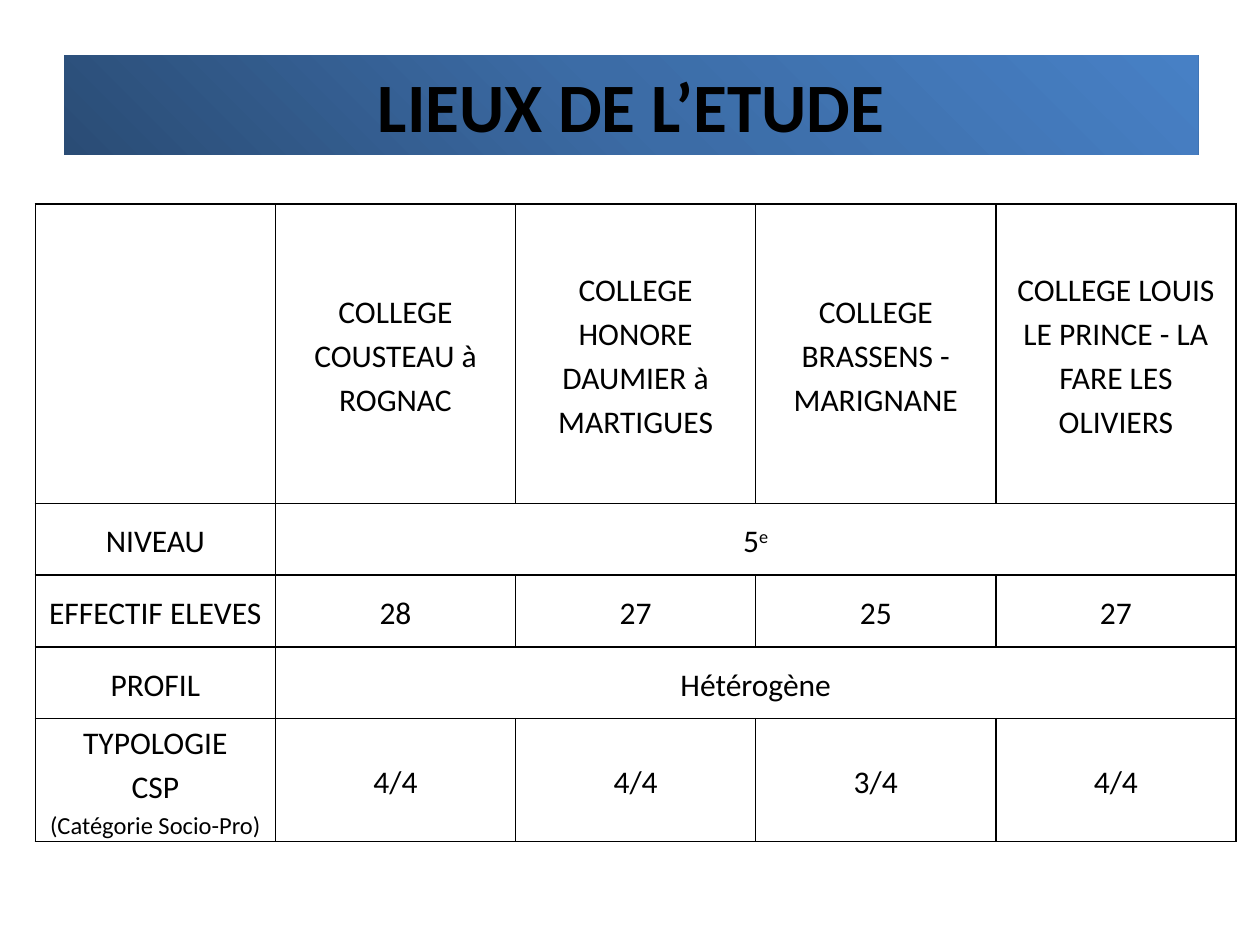
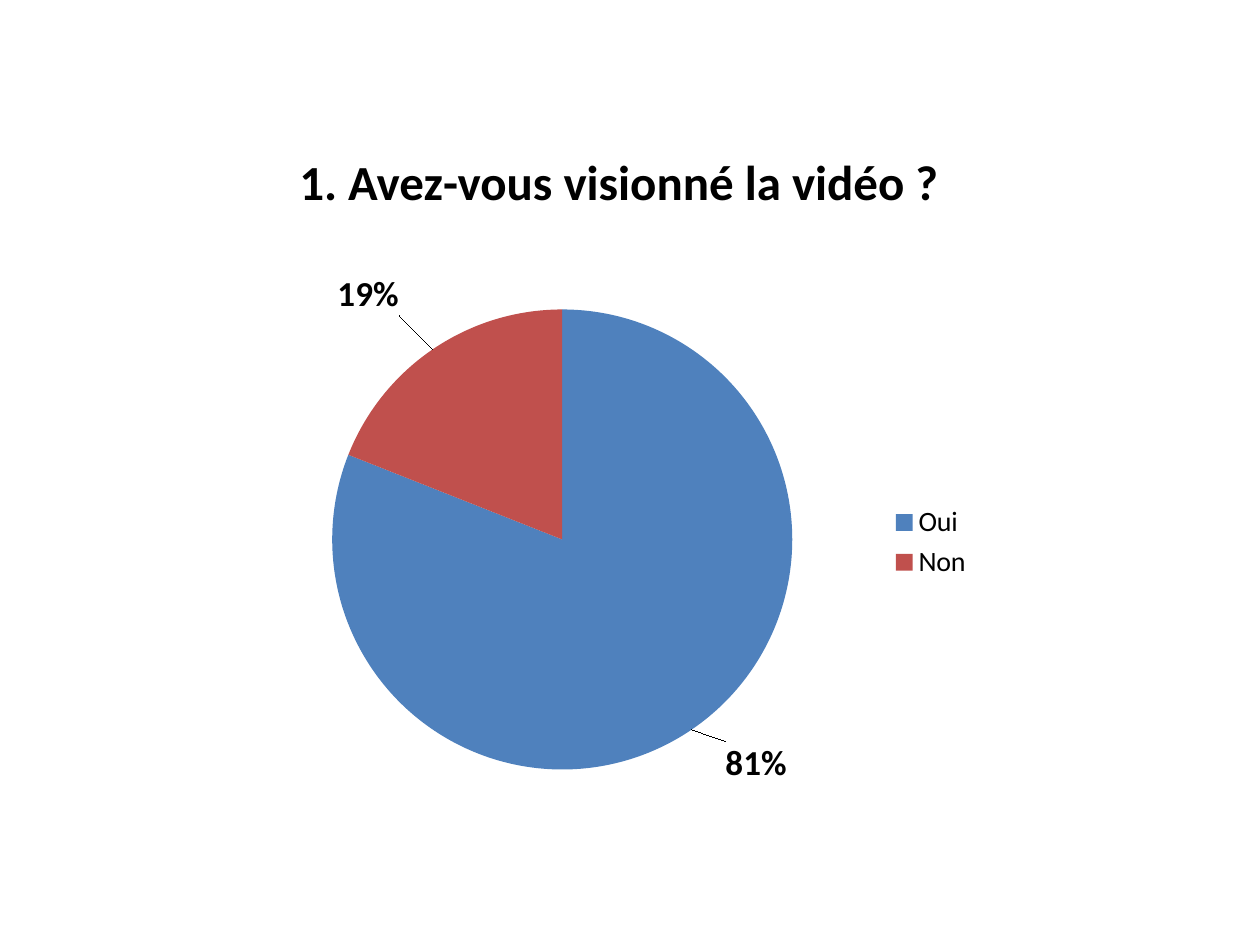
from copy import deepcopy

from pptx import Presentation
from pptx.chart.data import CategoryChartData
from pptx.dml.color import RGBColor
from pptx.enum.chart import XL_CHART_TYPE, XL_LABEL_POSITION, XL_LEGEND_POSITION
from pptx.enum.shapes import MSO_SHAPE
from pptx.enum.text import MSO_ANCHOR, PP_ALIGN
from pptx.oxml import parse_xml
from pptx.oxml.ns import nsdecls
from pptx.util import Inches, Pt

BLACK = RGBColor(0x00, 0x00, 0x00)
NAVY = RGBColor(0x2A, 0x4C, 0x75)
STEEL = RGBColor(0x3C, 0x6C, 0xA6)
SKY = RGBColor(0x47, 0x80, 0xC5)
BLUE = RGBColor(0x4F, 0x81, 0xBD)
RED = RGBColor(0xC0, 0x50, 0x4D)
FONT = "Calibri"
COLS, ROWS = 20, 15  # grid of the slide


class Deck:
    """Style, current slide and one method per kind of element."""

    def __init__(self):
        self.prs = Presentation()
        self.prs.slide_width, self.prs.slide_height = Inches(10), Inches(7.5)
        self.slide = None

    def page(self):
        self.slide = self.prs.slides.add_slide(self.prs.slide_layouts[6])

    def across(self, n):
        return round(self.prs.slide_width * n / COLS)

    def down(self, n):
        return round(self.prs.slide_height * n / ROWS)

    def box(self, x, y, w, h):
        return self.across(x), self.down(y), self.across(w), self.down(h)

    def style(self, font, size, bold=False):
        font.name, font.size, font.bold = FONT, Pt(size), bold
        font.color.rgb = BLACK

    def put(self, frame, lines, bold=False, space=None):
        """Each line is a list of (text, size) or (text, size, raise) runs."""
        for i, line in enumerate(lines):
            para = frame.add_paragraph() if i else frame.paragraphs[0]
            para.alignment = PP_ALIGN.CENTER
            para.line_spacing = space
            for text, size, *lift in line:
                run = para.add_run()
                run.text = text
                self.style(run.font, size, bold)
                if lift:
                    run._r.get_or_add_rPr().set("baseline", f"{lift[0] * 1000}")

    def band(self, text, size, *place):
        shape = self.slide.shapes.add_shape(MSO_SHAPE.RECTANGLE, *self.box(*place))
        shape.shadow.inherit = False
        shape.line.fill.background()
        fill = shape.fill
        fill.gradient()
        fill.gradient_angle = 45
        first = fill._fill._gradFill.gsLst[0]
        first.addnext(deepcopy(first))
        for stop, color, pos in zip(fill.gradient_stops, (NAVY, STEEL, SKY), (0, 0.5, 1)):
            stop.color.rgb, stop.position = color, pos
        shape.text_frame.vertical_anchor = MSO_ANCHOR.MIDDLE
        self.put(shape.text_frame, [[(text, size)]], bold=True)

    def text(self, text, size, *place):
        frame = self.slide.shapes.add_textbox(*self.box(*place)).text_frame
        frame.word_wrap = True
        frame.vertical_anchor = MSO_ANCHOR.BOTTOM
        self.put(frame, [[(text, size)]], bold=True)

    def table(self, data, highs, *place):
        wide = len(data[0])
        table = self.slide.shapes.add_table(len(data), wide, *self.box(*place)).table
        table.first_row = table.horz_banding = False
        for row, high in zip(table.rows, highs):
            row.height = self.down(high)
        for r, line in enumerate(data):
            for c in range(wide):
                self.cell(table.cell(r, c), line[c] if c < len(line) else [])
            if len(line) < wide:  # last value spans the rest of the row
                table.cell(r, len(line) - 1).merge(table.cell(r, wide - 1))

    def cell(self, cell, value):
        cell.fill.background()
        cell.vertical_anchor = MSO_ANCHOR.MIDDLE
        cell.margin_left = cell.margin_right = Inches(0.07)
        cell.margin_top = cell.margin_bottom = 0
        lines = [[(value, 18)]] if isinstance(value, str) else value
        self.put(cell.text_frame, lines, space=1.15)
        for i, side in enumerate("LRTB"):
            cell._tc.get_or_add_tcPr().insert(i, parse_xml(
                f'<a:ln{side} {nsdecls("a")} w="{Pt(1)}"><a:solidFill>'
                f'<a:srgbClr val="{BLACK}"/></a:solidFill></a:ln{side}>'))

    def layout(self, x, y, w=None, h=None):
        """Manual chart layout, in shares of the chart."""
        tags = [("x", x), ("y", y)]
        if w:
            tags = [("layoutTarget", "inner"), ("xMode", "edge"),
                    ("yMode", "edge"), *tags, ("w", w), ("h", h)]
        body = "".join(f'<c:{tag} val="{val}"/>' for tag, val in tags)
        return parse_xml(f'<c:layout {nsdecls("c")}><c:manualLayout>{body}'
                         '</c:manualLayout></c:layout>')

    def pie(self, name, slices, *place):
        """Each slice is (category, value, colour, label shift)."""
        data = CategoryChartData()
        data.categories = [part[0] for part in slices]
        data.add_series(name, [part[1] for part in slices])
        chart = self.slide.shapes.add_chart(
            XL_CHART_TYPE.PIE, *self.box(*place), data).chart
        chart.has_title = False
        self.style(chart.font, 10)
        chart.has_legend = True
        chart.legend.position = XL_LEGEND_POSITION.RIGHT
        chart.legend.include_in_layout = False
        self.style(chart.legend.font, 16)

        # Plot area
        plot = chart.plots[0]
        plot.vary_by_categories = True
        area = chart._chartSpace.chart.plotArea
        for old in area.xpath("c:layout"):
            area.remove(old)
        area.insert(0, self.layout(0.12, 0.08, 0.62, 0.83))

        # Slices with shifted percent labels
        series = plot.series[0]
        labels = series.data_labels
        labels.show_value, labels.show_percentage = False, True
        labels.number_format, labels.number_format_is_linked = "0%", False
        labels.position = XL_LABEL_POSITION.OUTSIDE_END
        self.style(labels.font, 20, True)
        for i, (_, _, color, shift) in enumerate(slices):
            point = series.points[i]
            point.format.fill.solid()
            point.format.fill.fore_color.rgb = color
            point.data_label.position = XL_LABEL_POSITION.OUTSIDE_END
            self.style(point.data_label.font, 20, True)
            mark = series._element.xpath(f".//c:dLbl[c:idx/@val={i}]")[0]
            mark.xpath("c:idx")[0].addnext(self.layout(*shift))
            mark.xpath("c:showVal")[0].set("val", "0")
            mark.xpath("c:showPercent")[0].set("val", "1")


def main():
    deck = Deck()

    # Places of the study
    deck.page()
    deck.band("LIEUX DE L’ETUDE", 39.6, 1.02, 0.88, 18, 1.58)
    deck.table([
        ["", "COLLEGE COUSTEAU à ROGNAC", "COLLEGE HONORE DAUMIER à MARTIGUES",
         "COLLEGE BRASSENS - MARIGNANE",
         "COLLEGE LOUIS LE PRINCE - LA FARE LES OLIVIERS"],
        ["NIVEAU", [[("5", 18), ("e", 18, 30)]]],
        ["EFFECTIF ELEVES", "28", "27", "25", "27"],
        ["PROFIL", "Hétérogène"],
        [[[("TYPOLOGIE", 18)], [("CSP", 18)], [("(Catégorie Socio-Pro)", 14)]],
         "4/4", "4/4", "3/4", "4/4"],
    ], [4.75, 1.14, 1.14, 1.14, 1.94], 0.56, 3.24, 19.06, 10.11)

    # First question
    deck.page()
    deck.text("1. Avez-vous visionné la vidéo ?", 28, 0, 1.36, 19.64, 2.08)
    deck.pie("Series 1", [("Oui", 81, BLUE, (0.04, 0.01)),
                          ("Non", 19, RED, (-0.04, -0.05))],
             3.86, 4.2, 11.78, 8.82)

    deck.prs.save("out.pptx")


if __name__ == "__main__":
    main()
